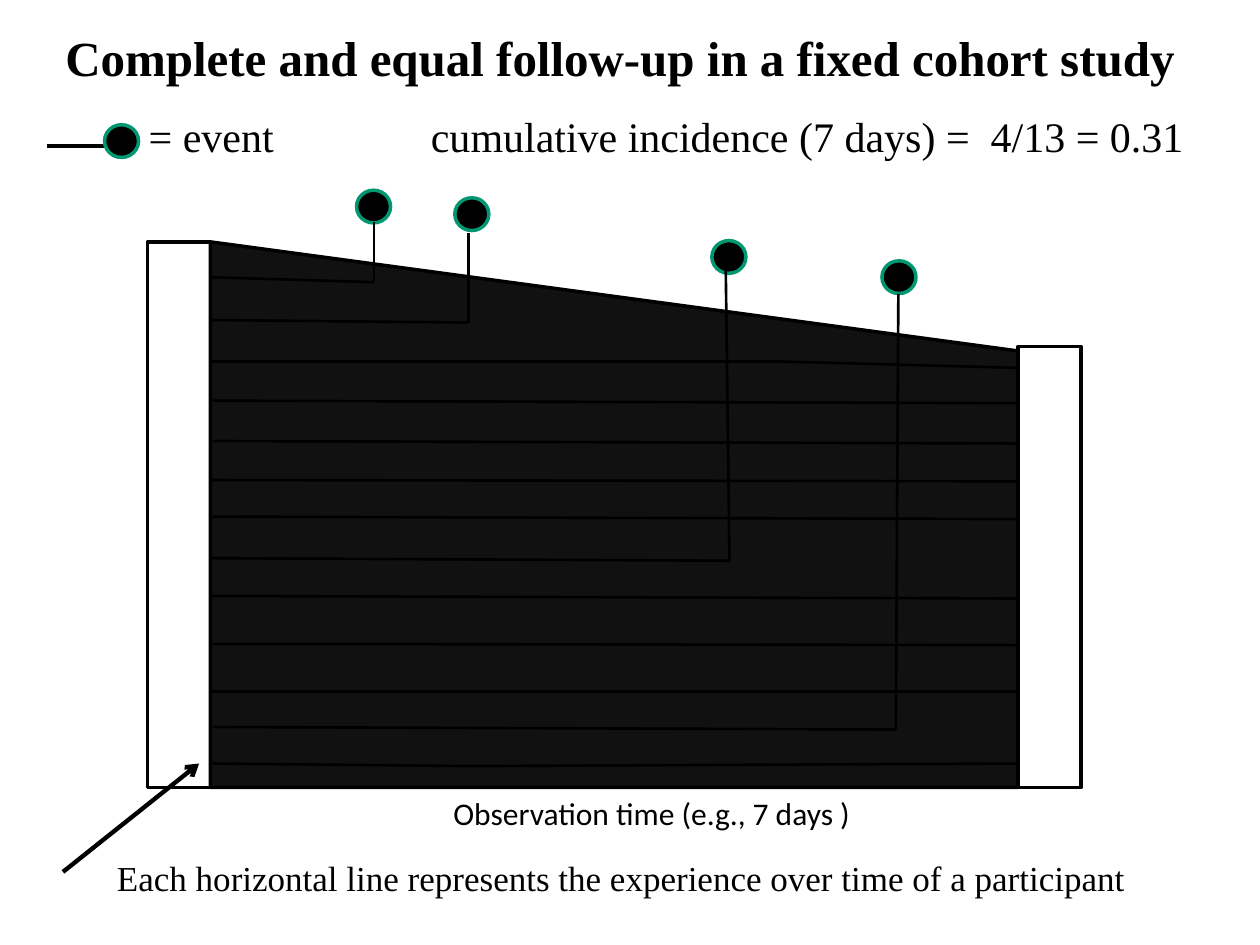
from lxml.etree import SubElement
from pptx import Presentation
from pptx.dml.color import RGBColor
from pptx.enum.shapes import MSO_CONNECTOR, MSO_SHAPE
from pptx.enum.text import MSO_ANCHOR, MSO_AUTO_SIZE
from pptx.oxml.ns import qn
from pptx.util import Inches, Pt

BLACK = RGBColor(0x00, 0x00, 0x00)
COHORT_DARK = RGBColor(0x11, 0x11, 0x11)
EVENT_GREEN = RGBColor(0x00, 0x97, 0x71)
SERIF = "Times New Roman"

COLUMNS, ROWS = 100, 75
CELL = Inches(0.1)
COHORT_LEFT, COHORT_TOP, COHORT_BOTTOM = 16.7, 19.2, 62.5
FOLLOW_UP_END = 80.8
BAR_WIDTH = 5
MARKER_WIDTH, MARKER_HEIGHT = 2.7, 2.6

COMPLETE_FOLLOW_UPS = [
    [(16.8, 28.7), (62.2, 28.7), (FOLLOW_UP_END, 29.2)],
    [(16.9, 31.8), (FOLLOW_UP_END, 32)],
    [(16.9, 35), (FOLLOW_UP_END, 35.2)],
    [(16.6, 38.1), (FOLLOW_UP_END, 38.2)],
    [(16.9, 41), (FOLLOW_UP_END, 41.2)],
    [(16.8, 47.3), (FOLLOW_UP_END, 47.5)],
    [(16.9, 51.1), (FOLLOW_UP_END, 51.2)],
    [(16.8, 54.9), (FOLLOW_UP_END, 54.9)],
    [(16.9, 60.6), (37.4, 60.8), (FOLLOW_UP_END, 60.6)],
]
EVENT_FOLLOW_UPS = [
    [(16.7, 22), (29.7, 22.4), (29.7, 17.6)],
    [(16.6, 25.4), (37.2, 25.6), (37.2, 18.5)],
    [(16.7, 44.3), (57.9, 44.5), (57.6, 21.3)],
    [(16.9, 57.7), (71.1, 57.9), (71.3, 23.3)],
]
EVENT_MARKERS = [(28.3, 15.1), (36.1, 15.7), (56.5, 19.1), (70, 20.7)]


def grid(*cells):
    """Turn grid columns and rows into slide lengths."""
    return [round(cell * CELL) for cell in cells]


def add_text(slide, box, text, size, font=SERIF, bold=False, wrap=True,
             anchor=MSO_ANCHOR.TOP, inset=1, tab=None):
    """Add a one-paragraph text box, with an optional tab stop."""
    frame = slide.shapes.add_textbox(*grid(*box)).text_frame
    frame.word_wrap = wrap
    frame.auto_size = MSO_AUTO_SIZE.SHAPE_TO_FIT_TEXT
    frame.vertical_anchor = anchor
    frame.margin_left = grid(inset)[0]
    paragraph = frame.paragraphs[0]
    run = paragraph.add_run()
    run.text = text
    run.font.name, run.font.size, run.font.bold = font, Pt(size), bold
    run.font.color.rgb = BLACK
    if tab:
        stops = SubElement(paragraph._p.get_or_add_pPr(), qn("a:tabLst"))
        SubElement(stops, qn("a:tab"), pos=str(grid(tab)[0]), algn="l")


def add_outline(slide, preset, box, fill=None, line=BLACK):
    """Add a preset shape with a two-point outline."""
    shape = slide.shapes.add_shape(preset, *grid(*box))
    shape.shadow.inherit = False
    if fill is None:
        shape.fill.background()
    else:
        shape.fill.solid()
        shape.fill.fore_color.rgb = fill
    shape.line.color.rgb = line
    shape.line.width = Pt(2)
    return shape


def add_event(slide, left, top):
    """Add the round marker of an event."""
    add_outline(slide, MSO_SHAPE.OVAL, (left, top, MARKER_WIDTH, MARKER_HEIGHT),
                BLACK, EVENT_GREEN)


def add_track(slide, points, width=1.5, arrow=False):
    """Join successive grid points with straight lines."""
    for start, end in zip(points, points[1:]):
        track = slide.shapes.add_connector(MSO_CONNECTOR.STRAIGHT, *grid(*start, *end))
        track.line.color.rgb = BLACK
        track.line.width = Pt(width)
        if arrow:
            SubElement(track.line._get_or_add_ln(), qn("a:tailEnd"), type="arrow")
        SubElement(track._element.spPr, qn("a:effectLst"))


def add_cohort(slide):
    """Add the shrinking cohort between its start and end bars."""
    height = COHORT_BOTTOM - COHORT_TOP
    area = add_outline(slide, MSO_SHAPE.FLOWCHART_MANUAL_INPUT,
                       (COHORT_LEFT, COHORT_TOP, FOLLOW_UP_END - COHORT_LEFT, height),
                       COHORT_DARK)
    area._element.spPr.xfrm.set("flipH", "1")
    for left, top in ((FOLLOW_UP_END, 27.5), (COHORT_LEFT - BAR_WIDTH, COHORT_TOP)):
        add_outline(slide, MSO_SHAPE.RECTANGLE,
                    (left, top, BAR_WIDTH, COHORT_BOTTOM - top))


def main():
    """Build the follow-up slide."""
    deck = Presentation()
    deck.slide_width, deck.slide_height = grid(COLUMNS, ROWS)
    slide = deck.slides.add_slide(deck.slide_layouts[6])

    add_cohort(slide)
    add_text(slide, (35, 62.5, 33.9, 4), "Observation time (e.g., 7 days )", 18,
             font="Calibri", wrap=False)
    add_text(slide, (4.2, 1.7, 91.1, 5.7),
             "Complete and equal follow-up in a fixed cohort study", 28,
             bold=True, wrap=False)
    add_text(slide, (3.3, 8.3, 92.3, 5),
             "= event\tcumulative incidence (7 days) =  4/13 = 0.31", 24,
             anchor=MSO_ANCHOR.MIDDLE, inset=8.5, tab=22.4)
    add_track(slide, [(3.7, 11.6), (8.7, 11.6)], width=2)
    add_event(slide, 8.3, 9.9)

    for marker in EVENT_MARKERS:
        add_event(slide, *marker)
    for follow_up in EVENT_FOLLOW_UPS + COMPLETE_FOLLOW_UPS:
        add_track(slide, follow_up)

    add_track(slide, [(5, 69.2), (15.8, 60.6)], width=2.5, arrow=True)
    add_text(slide, (8.3, 67.5, 85.8, 4.4),
             "Each horizontal line represents the experience over time of a participant", 20)
    deck.save("out.pptx")


if __name__ == "__main__":
    main()
